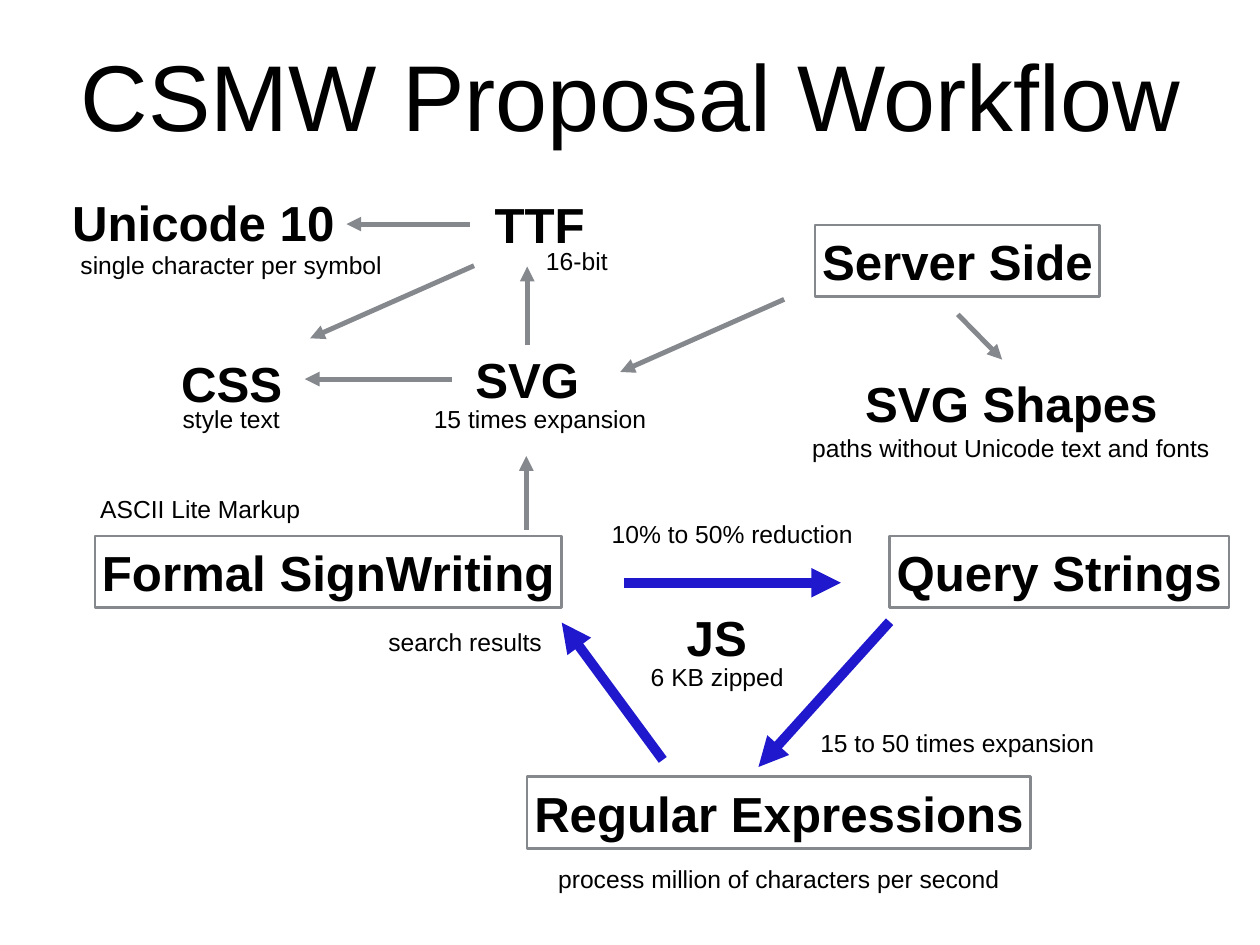
from lxml.etree import SubElement
from pptx import Presentation
from pptx.dml.color import RGBColor
from pptx.enum.shapes import MSO_CONNECTOR, MSO_SHAPE
from pptx.enum.text import MSO_ANCHOR, MSO_AUTO_SIZE, PP_ALIGN
from pptx.oxml.ns import qn
from pptx.util import Inches, Pt

COLORS = {"text": "000000", "gray": "85888D", "blue": "1F18CD"}
FONT = "Arial"
INSET = 0.06
HEADING_SIZE, NOTE_SIZE = 40, 20
HEADING_HEIGHT, BOX_HEIGHT, NOTE_HEIGHT = 0.78, 0.81, 0.44


def write_text(shape, text, size, bold=False, wrap=False):
    frame = shape.text_frame
    frame.word_wrap = wrap
    frame.auto_size = MSO_AUTO_SIZE.NONE if wrap else MSO_AUTO_SIZE.SHAPE_TO_FIT_TEXT
    frame.vertical_anchor = MSO_ANCHOR.MIDDLE
    frame.margin_left = frame.margin_right = Inches(INSET)
    frame.margin_top = frame.margin_bottom = Inches(INSET)
    paragraph = frame.paragraphs[0]
    paragraph.alignment = PP_ALIGN.CENTER
    run = paragraph.add_run()
    run.text = text
    run.font.name = FONT
    run.font.size = Pt(size)
    run.font.bold = bold
    run.font.color.rgb = RGBColor.from_string(COLORS["text"])


def add_arrow(slide, start, end, color, width):
    points = [Inches(value) for value in (*start, *end)]
    arrow = slide.shapes.add_connector(MSO_CONNECTOR.STRAIGHT, *points)
    arrow.line.color.rgb = RGBColor.from_string(COLORS[color])
    arrow.line.width = Pt(width)
    SubElement(arrow.line._get_or_add_ln(), qn("a:tailEnd"), type="triangle")
    SubElement(arrow._element.spPr, qn("a:effectLst"))


presentation = Presentation()
presentation.slide_width = Inches(14.22)
presentation.slide_height = Inches(10.67)
slide = presentation.slides.add_slide(presentation.slide_layouts[5])

title = slide.shapes.title
title.left, title.top = Inches(0.15), Inches(0.37)
title.width, title.height = Inches(13.93), Inches(1.38)
write_text(title, "CSMW Proposal Workflow", 76, wrap=True)

# Framed stages: text, left, top, width
framed_stages = [
    ("Formal SignWriting", 1.07, 6.05, 5.27),
    ("Regular Expressions", 5.95, 8.77, 5.68),
    ("Query Strings", 10.04, 6.05, 3.83),
    ("Server Side", 9.2, 2.54, 3.21),
]
for text, left, top, width in framed_stages:
    box = slide.shapes.add_shape(
        MSO_SHAPE.RECTANGLE, Inches(left), Inches(top), Inches(width), Inches(BOX_HEIGHT))
    box.shadow.inherit = False
    box.fill.background()
    box.line.color.rgb = RGBColor.from_string(COLORS["gray"])
    box.line.width = Pt(2)
    write_text(box, text, HEADING_SIZE, bold=True)

# Unframed labels: text, left, top, width
headings = [
    ("Unicode 10", 0.75, 2.11, 3.09),
    ("TTF", 5.52, 2.14, 1.14),
    ("CSS", 1.98, 3.93, 1.27),
    ("SVG", 5.3, 3.89, 1.3),
    ("SVG Shapes", 9.7, 4.16, 3.43),
    ("JS", 7.69, 6.8, 0.8),
]
notes = [
    ("single character per symbol", 0.81, 2.77, 3.6),
    ("16-bit", 6.09, 2.72, 0.84),
    ("style text", 2, 4.51, 1.22),
    ("15 times expansion", 4.83, 4.51, 2.53),
    ("paths without Unicode text and fonts", 9.08, 4.83, 4.66),
    ("ASCII Lite Markup", 1.07, 5.52, 2.38),
    ("10% to 50% reduction", 6.83, 5.81, 2.87),
    ("search results", 4.32, 7.02, 1.86),
    ("6 KB zipped", 7.26, 7.42, 1.67),
    ("15 to 50 times expansion", 9.19, 8.16, 3.23),
    ("process million of characters per second", 6.19, 9.7, 5.2),
]
for labels, size, height, bold in (
    (headings, HEADING_SIZE, HEADING_HEIGHT, True),
    (notes, NOTE_SIZE, NOTE_HEIGHT, False),
):
    for text, left, top, width in labels:
        label = slide.shapes.add_textbox(
            Inches(left), Inches(top), Inches(width), Inches(height))
        write_text(label, text, size, bold=bold)

conversion_arrows = [
    ((5.94, 5.98), (5.94, 5.15)),
    ((5.3, 2.53), (3.91, 2.53)),
    ((5.95, 3.9), (5.95, 3.01)),
    ((5.1, 4.28), (3.44, 4.28)),
    ((5.35, 3), (3.5, 3.82)),
    ((8.85, 3.38), (7, 4.2)),
    ((10.81, 3.55), (11.31, 4.06)),
]
search_cycle_arrows = [
    ((7.04, 6.58), (9.49, 6.58)),
    ((10.04, 7.02), (8.56, 8.66)),
    ((7.48, 8.58), (6.34, 7.03)),
]
for arrows, color, width in (
    (conversion_arrows, "gray", 4),
    (search_cycle_arrows, "blue", 8),
):
    for start, end in arrows:
        add_arrow(slide, start, end, color, width)

presentation.save("out.pptx")
